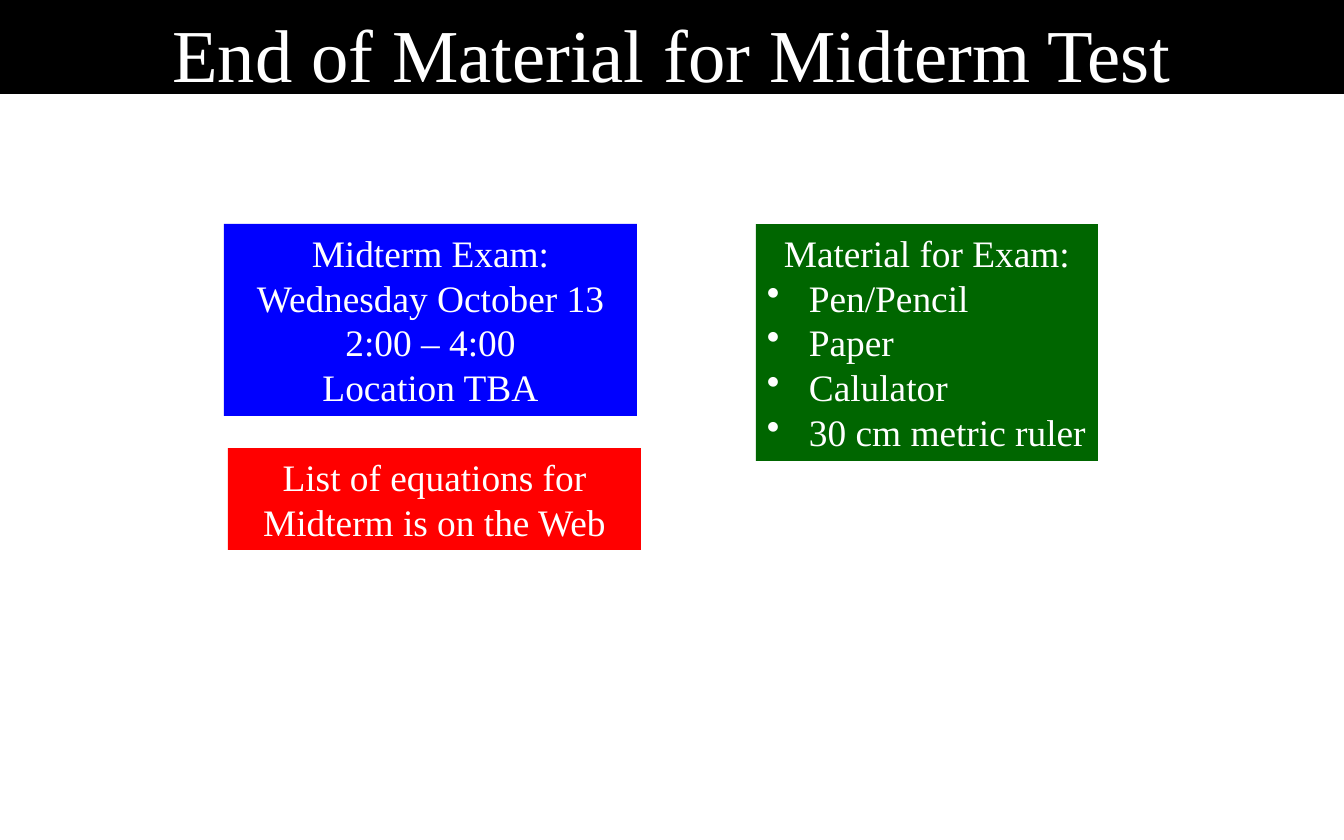
from pptx import Presentation
from pptx.dml.color import RGBColor
from pptx.enum.shapes import MSO_SHAPE as Shape
from pptx.enum.text import MSO_ANCHOR as Anchor, PP_ALIGN as Align
from pptx.oxml.ns import qn
from pptx.util import Emu, Pt
from lxml.etree import SubElement

SCALE = 914400 // 112
PAGE_SIZE = (1344, 840)
FONT = "Times New Roman"
WHITE = "FFFFFF"
BULLET_INDENT = 42

PANELS = [
    {"at": (0, -7, 1344, 101), "fill": "000000", "size": 48, "top": 15, "bottom": 0,
     "lines": ["End of Material for Midterm Test"], "bullets": []},
    {"at": (224, 224, 413, 192), "fill": "0000FF", "size": 24, "top": 6, "bottom": 6,
     "lines": ["Midterm Exam:", "Wednesday October 13", "2:00 – 4:00", "Location TBA"],
     "bullets": []},
    {"at": (756, 224, 342, 237), "fill": "006600", "size": 24, "top": 6, "bottom": 6,
     "lines": ["Material for Exam:"],
     "bullets": ["Pen/Pencil", "Paper", "Calulator", "30 cm metric ruler"]},
    {"at": (228, 448, 413, 102), "fill": "FF0000", "size": 24, "top": 6, "bottom": 6,
     "lines": ["List of equations for Midterm is on the Web"], "bullets": []},
]


def px(length):
    return Emu(length * SCALE)


def color(value):
    return RGBColor.from_string(value)


def apply(target, values):
    for name, value in values.items():
        setattr(target, name, value)


def add_bullet(para):
    properties = para._p.get_or_add_pPr()
    properties.set("marL", str(px(BULLET_INDENT)))
    properties.set("indent", str(px(-BULLET_INDENT)))
    SubElement(properties, qn("a:buChar")).set("char", "•")


def add_panel(page, panel):
    box = page.shapes.add_shape(Shape.RECTANGLE, *map(px, panel["at"]))
    box.shadow.inherit = False
    box.fill.solid()
    box.fill.fore_color.rgb = color(panel["fill"])
    box.line.fill.background()
    frame = box.text_frame
    apply(frame, {"word_wrap": True, "vertical_anchor": Anchor.TOP,
                  "margin_top": px(panel["top"]), "margin_bottom": px(panel["bottom"])})
    texts = panel["lines"] + panel["bullets"]
    for index, text in enumerate(texts):
        para = frame.paragraphs[0] if index == 0 else frame.add_paragraph()
        is_bullet = index >= len(panel["lines"])
        para.alignment = Align.LEFT if is_bullet else Align.CENTER
        if is_bullet:
            add_bullet(para)
        span = para.add_run()
        span.text = text
        apply(span.font, {"name": FONT, "size": Pt(panel["size"])})
        span.font.color.rgb = color(WHITE)


def main():
    deck = Presentation()
    deck.slide_width, deck.slide_height = map(px, PAGE_SIZE)
    page = deck.slides.add_slide(deck.slide_layouts[6])
    for panel in PANELS:
        add_panel(page, panel)
    deck.save("out.pptx")


if __name__ == "__main__":
    main()
